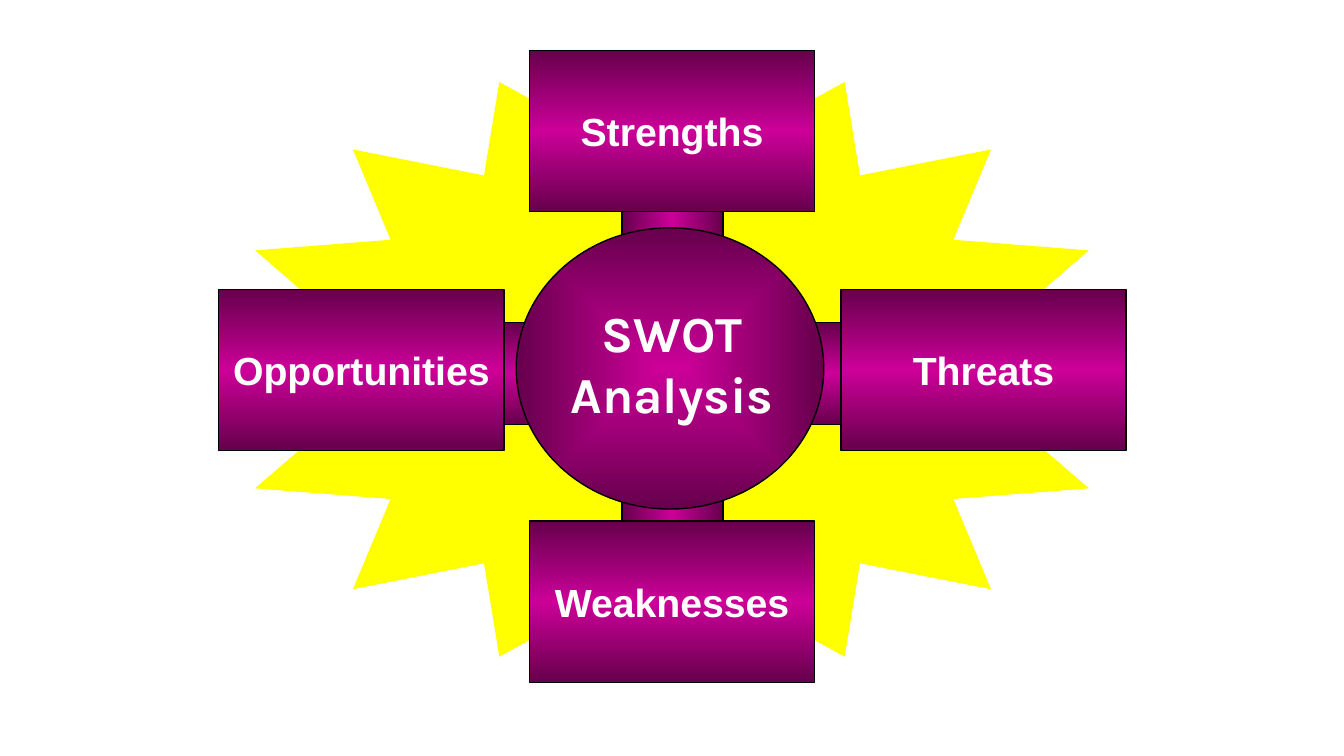
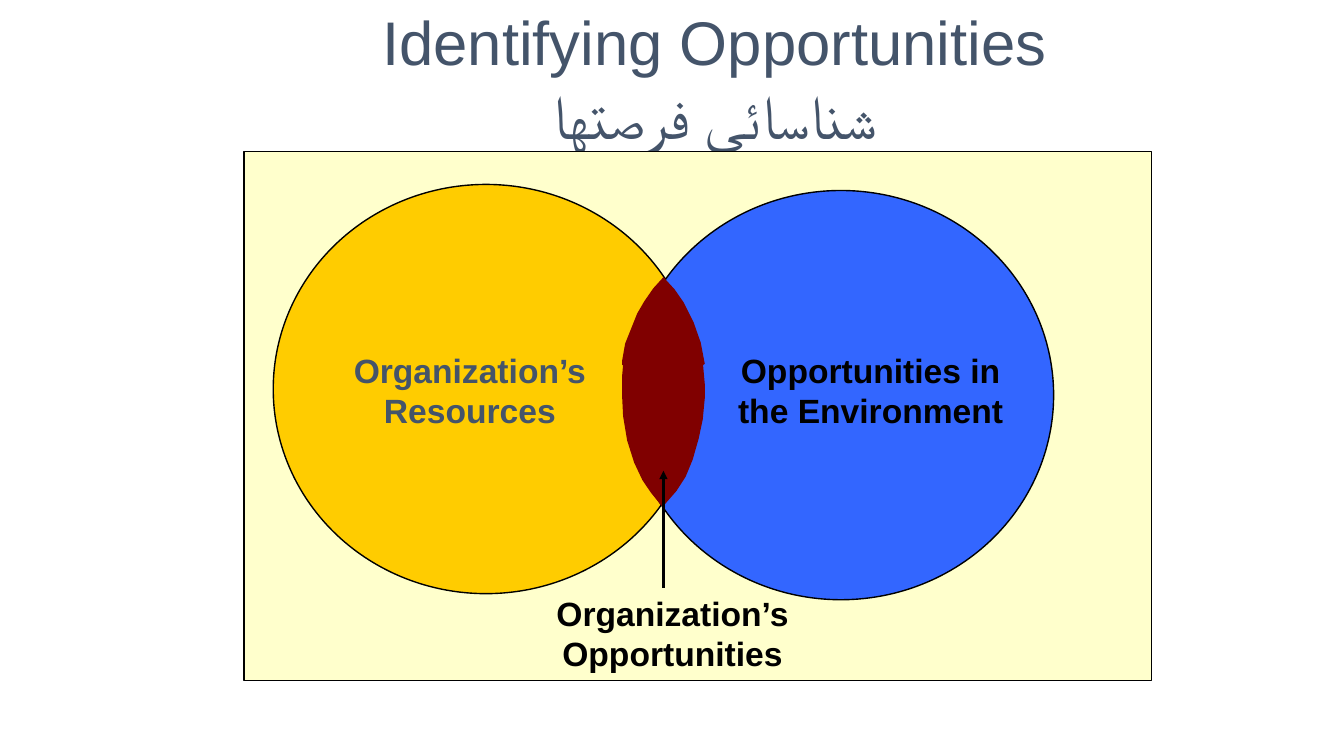
from collections import namedtuple
from dataclasses import dataclass

from pptx import Presentation
from pptx.dml.color import RGBColor
from pptx.enum.shapes import MSO_CONNECTOR, MSO_SHAPE
from pptx.enum.text import MSO_ANCHOR, MSO_AUTO_SIZE, PP_ALIGN
from pptx.oxml import parse_xml
from pptx.oxml.ns import nsdecls, qn
from pptx.util import Pt

RECTANGLE = MSO_SHAPE.RECTANGLE
OVAL = MSO_SHAPE.OVAL
STAR = MSO_SHAPE.STAR_16_POINT
STRAIGHT = MSO_CONNECTOR.STRAIGHT
MIDDLE = MSO_ANCHOR.MIDDLE
TOP = MSO_ANCHOR.TOP
CENTER = PP_ALIGN.CENTER
NO_AUTOFIT = MSO_AUTO_SIZE.NONE

PX = 9144
SLIDE_WIDTH, SLIDE_HEIGHT = 1333, 750
TITLE_ONLY_LAYOUT, BLANK_LAYOUT = 5, 6
ACROSS, DOWN = 0, 90

Box = namedtuple("Box", "left top width height")


@dataclass(frozen=True)
class Theme:
    """Colours, fonts and type sizes of the presentation."""
    ink: str = "000000"
    white: str = "FFFFFF"
    slate: str = "44546A"
    magenta: str = "CC0099"
    plum: str = "66004C"
    yellow: str = "FFFF00"
    cream: str = "FFFFCC"
    gold: str = "FFCC00"
    blue: str = "3366FF"
    maroon: str = "800000"
    font: str = "Arial"
    hub_font: str = "Karla"
    title_size: int = 44
    hub_size: int = 36
    box_size: int = 28
    label_size: int = 24


THEME = Theme()

LENS_TOP = [
    (658, 275), (648, 286), (639, 299), (632, 311), (626, 326), (620, 341),
    (617, 358), (617, 362), (632, 371), (658, 378), (681, 373), (699, 361),
    (695, 340), (688, 320), (678, 300), (669, 287),
]
LENS_BOTTOM = [
    (619, 359), (632, 368), (659, 374), (682, 368), (697, 359), (699, 381),
    (699, 395), (697, 416), (693, 435), (687, 456), (680, 473), (671, 487),
    (657, 503), (645, 488), (637, 476), (629, 459), (622, 437), (618, 413),
    (617, 393), (617, 373), (618, 362),
]


def emu(*lengths):
    """Turn px into EMU."""
    return [length * PX for length in lengths]


def inside(box, left, top, width, height):
    """Return a box placed relative to the corner of another."""
    return Box(box.left + left, box.top + top, width, height)


def color(value):
    """Return a hex string as a colour."""
    return RGBColor.from_string(value)


def paint(shape, fill, outlined=True):
    """Give a shape a plain fill, an optional thin outline and no shadow."""
    shape.shadow.inherit = False
    shape.fill.solid()
    shape.fill.fore_color.rgb = color(fill)
    if outlined:
        shape.line.color.rgb = color(THEME.ink)
        shape.line.width = Pt(1)
    else:
        shape.line.fill.background()


def add_shape(slide, kind, box, fill, outlined=True):
    """Add a painted preset shape."""
    shape = slide.shapes.add_shape(kind, *emu(*box))
    paint(shape, fill, outlined)
    return shape


def set_gradient(shape, colors, direction):
    """Replace the plain fill of a shape with evenly spaced gradient stops."""
    step = 100000 // (len(colors) - 1)
    stops = "".join(
        f'<a:gs pos="{index * step}"><a:srgbClr val="{value}"/></a:gs>'
        for index, value in enumerate(colors))
    properties = shape.element.spPr
    properties.replace(properties.find(qn("a:solidFill")), parse_xml(
        f'<a:gradFill {nsdecls("a")} rotWithShape="1">'
        f"<a:gsLst>{stops}</a:gsLst>{direction}</a:gradFill>"))


def add_band(slide, box, angle):
    """Add a rectangle that is bright along its middle and dark at its edges."""
    shape = add_shape(slide, RECTANGLE, box, THEME.magenta)
    set_gradient(shape, (THEME.plum, THEME.magenta, THEME.plum),
                 f'<a:lin ang="{angle * 60000}" scaled="1"/>')
    return shape


def write(shape, text, size, ink, font=THEME.font, bold=True, anchor=MIDDLE, wrap=False):
    """Fill a shape with centred, formatted text."""
    frame = shape.text_frame
    frame.text = text
    frame.auto_size = NO_AUTOFIT
    frame.word_wrap = wrap
    frame.vertical_anchor = anchor
    for paragraph in frame.paragraphs:
        paragraph.alignment = CENTER
        for run in paragraph.runs:
            run.font.name = font
            run.font.size = Pt(size)
            run.font.bold = bold
            run.font.color.rgb = color(ink)


def add_label(slide, box, text, ink, size=THEME.label_size, font=THEME.font):
    """Add a text box with a bold centred label."""
    label = slide.shapes.add_textbox(*emu(*box))
    write(label, text, size, ink, font, anchor=TOP)


def add_polygon(slide, points, fill):
    """Add a closed outline without a border."""
    builder = slide.shapes.build_freeform(*points[0], scale=PX)
    builder.add_line_segments(points[1:], close=True)
    paint(builder.convert_to_shape(), fill, outlined=False)


def add_arrow(slide, start, end):
    """Add a straight arrow that points at its end."""
    arrow = slide.shapes.add_connector(STRAIGHT, *emu(*start, *end))
    arrow.line.color.rgb = color(THEME.ink)
    arrow.line.width = Pt(2)
    arrow.line._get_or_add_ln().append(
        parse_xml(f'<a:tailEnd {nsdecls("a")} type="triangle"/>'))
    arrow.element.spPr.append(parse_xml(f'<a:effectLst {nsdecls("a")}/>'))


def add_hub(slide, box):
    """Draw the round centre of the cross with its caption."""
    hub = add_shape(slide, OVAL, box, THEME.magenta)
    set_gradient(hub, (THEME.magenta, THEME.plum),
                 '<a:path path="shape"><a:fillToRect l="50000" t="50000" '
                 'r="50000" b="50000"/></a:path>')
    add_label(slide, inside(box, 37, 69, 235, 130), "SWOT\nAnalysis",
              THEME.white, THEME.hub_size, THEME.hub_font)


def add_swot_cross(slide, box):
    """Draw the four SWOT boxes around a hub on a starburst."""
    add_shape(slide, STAR, inside(box, 2, 8, 895, 617), THEME.yellow, outlined=False)
    for top in (380, 76):
        add_band(slide, inside(box, 400, top, 100, 169), ACROSS)
    for left in (225, 533):
        add_band(slide, inside(box, left, 270, 166, 101), DOWN)
    add_hub(slide, inside(box, 295, 176, 305, 279))

    width, height = 283, 160
    right, bottom = box.width - width, box.height - height
    middle_row = 237
    for text, left, top in (
        ("Threats", right, middle_row),
        ("Opportunities", 0, middle_row),
        ("Weaknesses", right // 2, bottom),
        ("Strengths", right // 2, 0),
    ):
        band = add_band(slide, inside(box, left, top, width, height), DOWN)
        write(band, text, THEME.box_size, THEME.white)


def set_title(slide, box, text):
    """Place and format the slide title."""
    title = slide.shapes.title
    title.left, title.top, title.width, title.height = emu(*box)
    write(title, text, THEME.title_size, THEME.slate, bold=False, wrap=True)


def add_venn(slide, box):
    """Draw two overlapping circles with labels on a panel."""
    add_shape(slide, RECTANGLE, box, THEME.cream)
    for left, top, fill in ((29, 33, THEME.gold), (381, 39, THEME.blue)):
        add_shape(slide, OVAL, inside(box, left, top, 422, 406), fill)
    for outline in (LENS_TOP, LENS_BOTTOM):
        points = [(box.left + x - 242, box.top + y - 150) for x, y in outline]
        add_polygon(slide, points, THEME.maroon)
    for text, left, top, width, ink in (
        ("Opportunities in\nthe Environment", 479, 192, 285, THEME.ink),
        ("Organization’s\nResources", 98, 192, 252, THEME.slate),
        ("Organization’s\nOpportunities", 299, 433, 252, THEME.ink),
    ):
        add_label(slide, inside(box, left, top, width, 91), text, ink)
    arrow_x = box.left + 416
    add_arrow(slide, (arrow_x, box.top + 433), (arrow_x, box.top + 317))


def main():
    """Build and save the presentation."""
    presentation = Presentation()
    presentation.slide_width, presentation.slide_height = emu(SLIDE_WIDTH, SLIDE_HEIGHT)
    layouts = presentation.slide_layouts

    swot_slide = presentation.slides.add_slide(layouts[BLANK_LAYOUT])
    add_swot_cross(swot_slide, Box(217, 50, 900, 627))

    venn_slide = presentation.slides.add_slide(layouts[TITLE_ONLY_LAYOUT])
    set_title(venn_slide, Box(283, 0, 852, 155), "Identifying Opportunities\nشناسائی فرصتها")
    add_venn(venn_slide, Box(242, 150, 900, 525))

    presentation.save("out.pptx")


if __name__ == "__main__":
    main()
